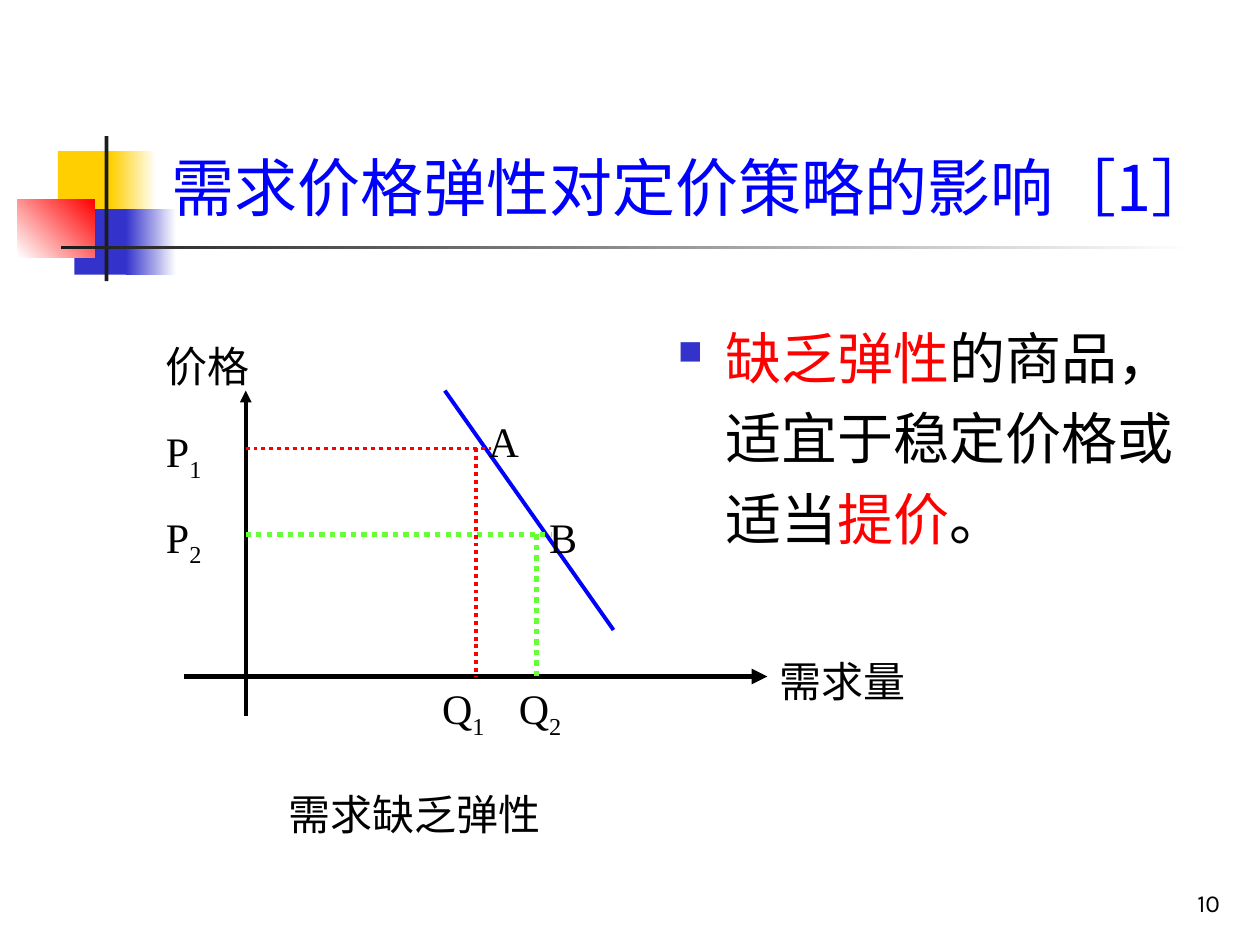
"""Build a slide on how price elasticity of demand shapes pricing."""
import typing

import lxml.etree
import pptx
import pptx.dml.color
import pptx.enum.dml
import pptx.enum.shapes
import pptx.enum.text
import pptx.oxml.ns
import pptx.util

Pt = pptx.util.Pt
qn = pptx.oxml.ns.qn
Align = pptx.enum.text.PP_ALIGN
Anchor = pptx.enum.text.MSO_ANCHOR
Fit = pptx.enum.text.MSO_AUTO_SIZE
BLACK, BLUE, RED, GREEN = "000000", "0000FF", "FF0000", "66FF33"
GOLD, NAVY, DARK, WHITE = "FFCF01", "3333CC", "1C1C1C", "FFFFFF"


class Block(typing.NamedTuple):
    left: float
    top: float
    width: float
    height: float
    start: str
    end: str = ""
    angle: float = 0


class Line(typing.NamedTuple):
    x1: float
    y1: float
    x2: float
    y2: float
    color: str
    width: float
    dots: bool = False
    arrow: bool = False


class Label(typing.NamedTuple):
    left: float
    top: float
    width: float
    text: str
    sub: str = ""


def tint(code: str) -> pptx.dml.color.RGBColor:
    return pptx.dml.color.RGBColor.from_string(code)


def add_block(shapes, b: Block) -> None:
    kind = pptx.enum.shapes.MSO_SHAPE.RECTANGLE
    box = shapes.add_shape(kind, Pt(b.left), Pt(b.top), Pt(b.width), Pt(b.height))
    box.shadow.inherit = False
    box.line.fill.background()
    if b.end:
        box.fill.gradient()
        box.fill.gradient_angle = b.angle
        for stop, code in zip(box.fill.gradient_stops, (b.start, b.end)):
            stop.color.rgb = tint(code)
    else:
        box.fill.solid()
        box.fill.fore_color.rgb = tint(b.start)


def add_line(shapes, l: Line) -> None:
    kind = pptx.enum.shapes.MSO_CONNECTOR.STRAIGHT
    item = shapes.add_connector(kind, Pt(l.x1), Pt(l.y1), Pt(l.x2), Pt(l.y2))
    item.line.color.rgb = tint(l.color)
    item.line.width = Pt(l.width)
    if l.dots:
        item.line.dash_style = pptx.enum.dml.MSO_LINE.ROUND_DOT
    if l.arrow:
        pen = item.line._get_or_add_ln()
        lxml.etree.SubElement(pen, qn("a:tailEnd"), type="triangle")
    lxml.etree.SubElement(item._element.spPr, qn("a:effectLst"))


def add_run(para, text: str, size: float, font: str, color: str, base: int = 0) -> None:
    run = para.add_run()
    run.text = text
    run.font.size = Pt(size)
    run.font.name = font
    run.font.color.rgb = tint(color)
    if base:
        run._r.get_or_add_rPr().set("baseline", str(base * 1000))


def add_box(shapes, left: float, top: float, width: float, height: float):
    box = shapes.add_textbox(Pt(left), Pt(top), Pt(width), Pt(height))
    box.text_frame.word_wrap = True
    return box.text_frame


def add_label(shapes, l: Label) -> None:
    frame = add_box(shapes, l.left, l.top, l.width, 36)
    frame.auto_size = Fit.SHAPE_TO_FIT_TEXT
    para = frame.paragraphs[0]
    add_run(para, l.text, 24, "Times New Roman", BLACK)
    if l.sub:
        add_run(para, l.sub, 24, "Times New Roman", BLACK, -25)


def add_title(slide) -> None:
    title = slide.shapes.title
    title.left, title.top, title.width, title.height = Pt(90.7), Pt(53.3), Pt(613.4), Pt(78.5)
    frame = title.text_frame
    frame.auto_size = Fit.NONE
    frame.vertical_anchor = Anchor.BOTTOM
    para = frame.paragraphs[0]
    para.alignment = Align.LEFT
    add_run(para, "需求价格弹性对定价策略的影响［1］", 36, "Noto Sans CJK SC", BLUE)


def add_body(shapes) -> None:
    para = add_box(shapes, 380.2, 173.5, 308.2, 306.7).paragraphs[0]
    para.line_spacing = 1.2
    props = para._p.get_or_add_pPr()
    props.set("marL", str(Pt(27)))
    props.set("indent", str(Pt(-27)))
    color = lxml.etree.SubElement(props, qn("a:buClr"))
    lxml.etree.SubElement(color, qn("a:srgbClr"), val=NAVY)
    lxml.etree.SubElement(props, qn("a:buSzPct"), val="60000")
    lxml.etree.SubElement(props, qn("a:buChar"), char="■")
    for text, code in (("缺乏弹性", RED), ("的商品，适宜于稳定价格或适当", BLACK),
                       ("提价", RED), ("。", BLACK)):
        add_run(para, text, 32, "Karla", code)


def add_graph(shapes) -> None:
    left, base = 140.4, 386.6
    p1, p2, q1, q2 = 256.3, 305.3, 272.2, 306.7
    for line in (
        Line(105.1, base, 438.5, base, BLACK, 3, arrow=True),
        Line(left, 409, left, 223.2, BLACK, 2.25, arrow=True),
        Line(254.2, 223.2, 350.6, 360, BLUE, 2.25),
        Line(left, p1, 280.8, p1, RED, 2.25, dots=True),
        Line(left, p2, 315.4, p2, GREEN, 3, dots=True),
        Line(q1, p1, q1, base, RED, 2.25, dots=True),
        Line(q2, p2, q2, base, GREEN, 3, dots=True),
    ):
        add_line(shapes, line)
    for label in (
        Label(87.8, 239.8, 52.6, "P", "1"),
        Label(87.8, 288.7, 52.6, "P", "2"),
        Label(245.5, base, 61.2, "Q", "1"),
        Label(289.4, base, 61.2, "Q", "2"),
        Label(87.8, 190.8, 96.5, "价格"),
        Label(438.5, 370.8, 131.8, "需求量"),
        Label(157.7, 447.1, 236.9, "需求缺乏弹性"),
        Label(q1, 234, 52.6, "A"),
        Label(q2, 288.7, 52.6, "B"),
    ):
        add_label(shapes, label)


def main() -> None:
    deck = pptx.Presentation()
    deck.slide_width, deck.slide_height = Pt(720), Pt(540)
    slide = deck.slides.add_slide(deck.slide_layouts[5])
    for block in (
        Block(33.1, 86.4, 34.6, 37.4, GOLD),
        Block(63.4, 86.4, 25.9, 37.4, GOLD, WHITE),
        Block(42.5, 119.5, 33.1, 37.4, NAVY),
        Block(72, 119.5, 28.8, 37.4, NAVY, WHITE),
        Block(10.1, 113.8, 43.9, 33.1, WHITE, RED, 45),
        Block(59.8, 77.8, 2.2, 82.8, DARK),
        Block(34.6, 140.4, 648, 2.2, DARK, WHITE),
    ):
        add_block(slide.shapes, block)
    add_title(slide)
    add_body(slide.shapes)
    add_graph(slide.shapes.add_group_shape().shapes)
    frame = add_box(slide.shapes, 554.4, 491.8, 149.8, 36)
    frame.vertical_anchor = Anchor.BOTTOM
    para = frame.paragraphs[0]
    para.alignment = Align.RIGHT
    add_run(para, "10", 14, "Karla", BLACK)
    deck.save("out.pptx")


if __name__ == "__main__":
    main()
